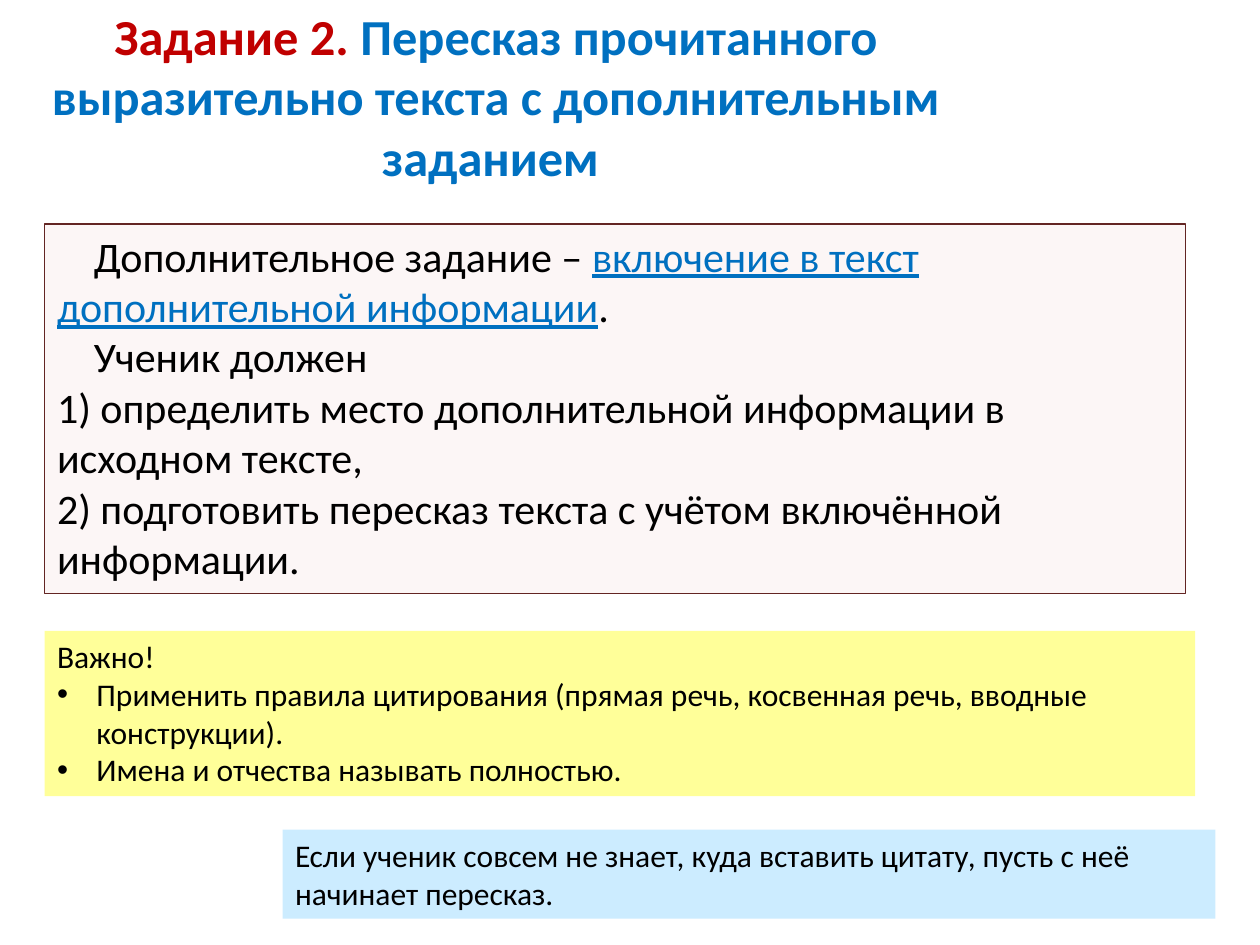
from dataclasses import dataclass, field
from typing import Optional

import lxml.etree
import pptx
import pptx.dml.color
import pptx.enum.shapes
import pptx.enum.text
import pptx.oxml.ns
import pptx.util

Pt = pptx.util.Pt
Anchor = pptx.enum.text.MSO_ANCHOR
Align = pptx.enum.text.PP_ALIGN


@dataclass(frozen=True)
class Theme:
    font: str = "Calibri"
    title_size: float = 28.8
    task_size: float = 24
    note_size: float = 18
    text: str = "000000"
    red: str = "C00000"
    blue: str = "0070C0"
    task_fill: str = "FCF6F6"
    task_line: str = "632523"
    important_fill: str = "FFFF99"
    hint_fill: str = "CCECFF"


THEME = Theme()


@dataclass(frozen=True)
class Span:
    text: str
    color: str = THEME.text
    bold: bool = False
    underline: bool = False


@dataclass(frozen=True)
class Para:
    spans: list[Span]
    margin: float = 0
    indent: float = 0
    bullet: str = ""


@dataclass(frozen=True)
class Box:
    left: float
    top: float
    width: float
    height: float
    size: float
    paras: list[Para] = field(default_factory=list)
    fill: Optional[str] = None
    line: Optional[str] = None
    anchor: Anchor = Anchor.TOP
    align: Align = Align.LEFT


def rgb(color: str) -> pptx.dml.color.RGBColor:
    return pptx.dml.color.RGBColor.from_string(color)


def set_values(target, values: dict) -> None:
    for name, value in values.items():
        setattr(target, name, value)


def write_para(paragraph, para: Para, box: Box) -> None:
    paragraph.alignment = box.align
    properties = paragraph._p.get_or_add_pPr()
    properties.set("marL", str(Pt(para.margin)))
    properties.set("indent", str(Pt(para.indent)))
    if para.bullet:
        qn = pptx.oxml.ns.qn
        lxml.etree.SubElement(properties, qn("a:buFont"), typeface="Arial")
        lxml.etree.SubElement(properties, qn("a:buChar"), char=para.bullet)
    for span in para.spans:
        run = paragraph.add_run()
        run.text = span.text
        set_values(run.font, {"name": THEME.font, "size": Pt(box.size),
                              "bold": span.bold, "underline": span.underline})
        run.font.color.rgb = rgb(span.color)


def draw_box(page, box: Box) -> None:
    place = [Pt(value) for value in (box.left, box.top, box.width, box.height)]
    if box.fill:
        shape = page.shapes.add_shape(pptx.enum.shapes.MSO_SHAPE.RECTANGLE, *place)
        shape.shadow.inherit = False
        shape.fill.solid()
        shape.fill.fore_color.rgb = rgb(box.fill)
        if box.line:
            shape.line.color.rgb = rgb(box.line)
            shape.line.width = Pt(0.75)
        else:
            shape.line.fill.background()
    else:
        shape = page.shapes.add_textbox(*place)
    frame = shape.text_frame
    set_values(frame, {"word_wrap": True, "vertical_anchor": box.anchor,
                       "auto_size": pptx.enum.text.MSO_AUTO_SIZE.NONE})
    for index, para in enumerate(box.paras):
        paragraph = frame.add_paragraph() if index else frame.paragraphs[0]
        write_para(paragraph, para, box)


def bullet(text: str) -> Para:
    return Para([Span(text)], margin=22.5, indent=-22.5, bullet="•")


LEFT = 25.5
FIRST_LINE = 21

BOXES = [
    # Title
    Box(8.5, 9.5, 550, 90.5, THEME.title_size, [
        Para([Span("Задание 2. ", THEME.red, bold=True),
              Span("Пересказ прочитанного выразительно текста "
                   "с дополнительным заданием ", THEME.blue, bold=True)]),
    ], anchor=Anchor.MIDDLE, align=Align.CENTER),
    # Task description
    Box(LEFT, 128, 652, 211, THEME.task_size, [
        Para([Span("Дополнительное задание – "),
              Span("включение в текст дополнительной информации",
                   THEME.blue, underline=True),
              Span(".")], indent=FIRST_LINE),
        Para([Span("Ученик должен")], indent=FIRST_LINE),
        Para([Span("1) определить место дополнительной информации "
                   "в исходном тексте,")]),
        Para([Span("2) подготовить пересказ текста с учётом "
                   "включённой информации.")]),
    ], fill=THEME.task_fill, line=THEME.task_line),
    # Important rules
    Box(LEFT, 360.5, 657.5, 94.5, THEME.note_size, [
        Para([Span("Важно!")]),
        bullet("Применить правила цитирования (прямая речь, "
               "косвенная речь, вводные конструкции)."),
        bullet("Имена и отчества называть полностью."),
    ], fill=THEME.important_fill),
    # Hint
    Box(161.5, 474, 533, 51, THEME.note_size, [
        Para([Span("Если ученик совсем не знает, куда вставить цитату, "
                   "пусть с неё начинает пересказ.")]),
    ], fill=THEME.hint_fill),
]


def main() -> None:
    deck = pptx.Presentation()
    set_values(deck, {"slide_width": Pt(720), "slide_height": Pt(540)})
    page = deck.slides.add_slide(deck.slide_layouts[6])
    for box in BOXES:
        draw_box(page, box)
    deck.save("out.pptx")


if __name__ == "__main__":
    main()
